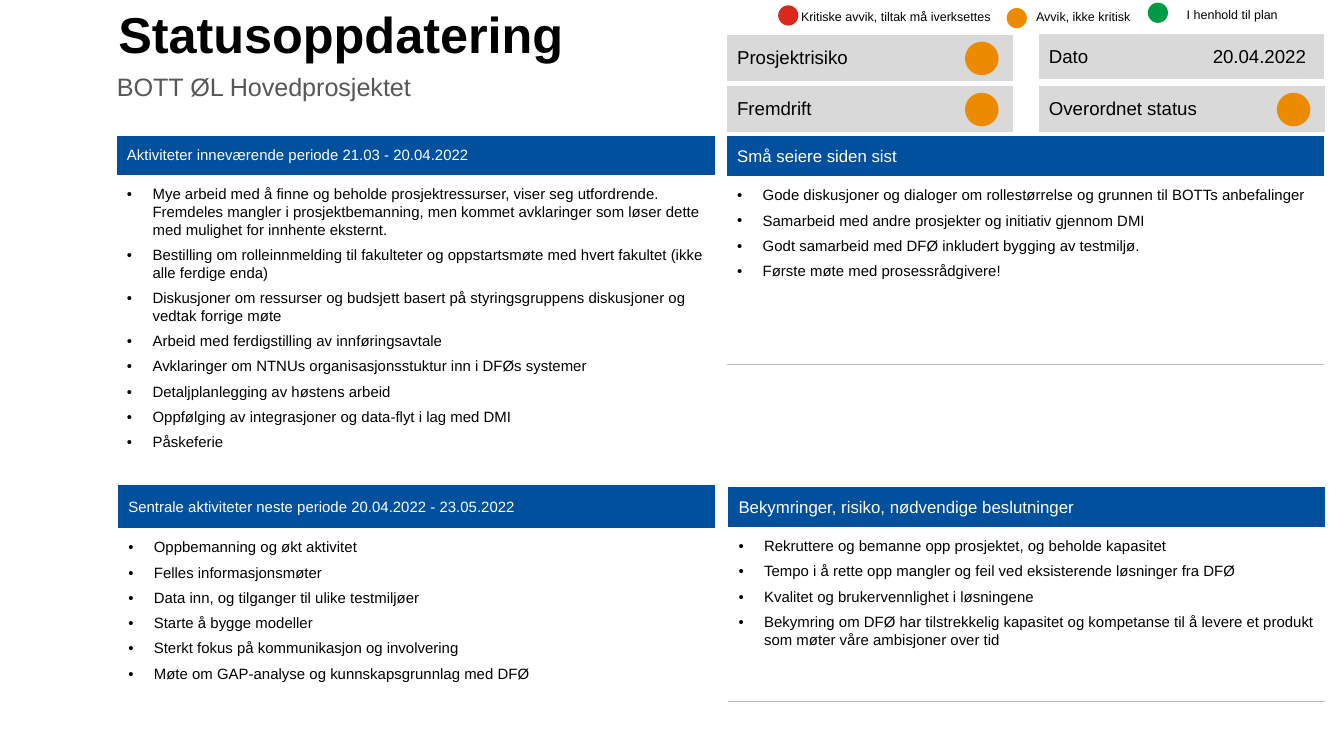
from dataclasses import dataclass

from lxml import etree
from pptx import Presentation
from pptx.dml.color import RGBColor
from pptx.enum.shapes import MSO_SHAPE
from pptx.enum.text import MSO_ANCHOR, MSO_AUTO_SIZE, PP_ALIGN
from pptx.oxml.ns import qn
from pptx.util import Inches, Pt

OVAL, RECTANGLE = MSO_SHAPE.OVAL, MSO_SHAPE.RECTANGLE
TOP, MIDDLE = MSO_ANCHOR.TOP, MSO_ANCHOR.MIDDLE
LEFT, CENTER = PP_ALIGN.LEFT, PP_ALIGN.CENTER
NO_AUTOFIT = MSO_AUTO_SIZE.NONE
NO_STYLE_NO_GRID = "{2D5ABB26-0587-4C30-8999-92F81FD0307C}"


@dataclass(frozen=True)
class Theme:
    font: str = "Arial"
    text: str = "000000"
    white: str = "FFFFFF"
    muted: str = "575757"
    header: str = "01509D"
    status: str = "D9D9D9"
    rule: str = "BBBCBC"
    red: str = "DA291C"
    amber: str = "ED8B00"
    green: str = "009A44"
    title_size: float = 27
    subtitle_size: float = 13.5
    status_size: float = 10
    body_size: float = 8
    legend_size: float = 6.75
    line_spacing: float = 1.06
    space_before: float = 4
    cell_inset: float = 5.4


@dataclass(frozen=True)
class Panel:
    left: float
    top: float
    width: float
    header_height: float
    body_height: float
    heading: str
    heading_size: float
    has_rule: bool
    bullets: tuple[str, ...]


@dataclass(frozen=True)
class StatusBar:
    left: float
    top: float
    columns: tuple[float, ...]
    texts: tuple[str, ...]


@dataclass(frozen=True)
class Legend:
    left: float
    top: float
    width: float
    text: str
    dot_left: float
    dot_top: float
    color: str


THEME = Theme()

PANELS = (
    Panel(0.87, 1.01, 4.45, 0.29, 2.47,
          "Aktiviteter inneværende periode 21.03 - 20.04.2022", 8, False, (
              "Mye arbeid med å finne og beholde prosjektressurser, viser seg utfordrende. "
              "Fremdeles mangler i prosjektbemanning, men kommet avklaringer som løser dette "
              "med mulighet for innhente eksternt.",
              "Bestilling om rolleinnmelding til fakulteter og oppstartsmøte med hvert fakultet "
              "(ikke alle ferdige enda)",
              "Diskusjoner om ressurser og budsjett basert på styringsgruppens diskusjoner og "
              "vedtak forrige møte",
              "Arbeid med ferdigstilling av innføringsavtale",
              "Avklaringer om NTNUs organisasjonsstuktur inn i DFØs systemer",
              "Detaljplanlegging av høstens arbeid",
              "Oppfølging av integrasjoner og data-flyt i lag med DMI",
              "Påskeferie")),
    Panel(5.41, 1.01, 4.44, 0.3, 1.4, "Små seiere siden sist", 9, True, (
        "Gode diskusjoner og dialoger om rollestørrelse og grunnen til BOTTs anbefalinger",
        "Samarbeid med andre prosjekter og initiativ gjennom DMI",
        "Godt samarbeid med DFØ inkludert bygging av testmiljø.",
        "Første møte med prosessrådgivere!")),
    Panel(0.88, 3.61, 4.44, 0.32, 1.69,
          "Sentrale aktiviteter neste periode 20.04.2022 - 23.05.2022", 8, False, (
              "Oppbemanning og økt aktivitet",
              "Felles informasjonsmøter",
              "Data inn, og tilganger til ulike testmiljøer",
              "Starte å bygge modeller",
              "Sterkt fokus på kommunikasjon og involvering",
              "Møte om GAP-analyse og kunnskapsgrunnlag med DFØ")),
    Panel(5.42, 3.62, 4.44, 0.3, 1.3, "Bekymringer, risiko, nødvendige beslutninger", 9, True, (
        "Rekruttere og bemanne opp prosjektet, og beholde kapasitet",
        "Tempo i å rette opp mangler og feil ved eksisterende løsninger fra DFØ",
        "Kvalitet og brukervennlighet i løsningene",
        "Bekymring om DFØ har tilstrekkelig kapasitet og kompetanse til å levere et produkt "
        "som møter våre ambisjoner over tid")),
)

STATUS_BARS = (
    StatusBar(5.41, 0.26, (2.13,), ("Prosjektrisiko",)),
    StatusBar(7.73, 0.25, (1.16, 0.96), ("Dato", "20.04.2022")),
    StatusBar(5.41, 0.64, (2.13,), ("Fremdrift",)),
    StatusBar(7.73, 0.64, (2.13,), ("Overordnet status",)),
)
STATUS_HEIGHT = 0.34

LEGENDS = (
    Legend(5.93, 0.02, 1.49, "Kritiske avvik, tiltak må iverksettes", 5.79, 0.04, THEME.red),
    Legend(7.68, 0.02, 0.77, "Avvik, ikke kritisk", 7.49, 0.06, THEME.amber),
    Legend(8.8, 0, 0.75, "I henhold til plan", 8.54, 0.02, THEME.green),
)
STATUS_DOTS = ((7.18, 0.31), (7.18, 0.69), (9.5, 0.69))


def format_font(font, size: float, color: str, bold: bool = False) -> None:
    font.name = THEME.font
    font.size = Pt(size)
    font.bold = bold
    font.color.rgb = RGBColor.from_string(color)


def format_runs(para, size: float, color: str, bold: bool = False) -> None:
    for span in para.runs:
        format_font(span.font, size, color, bold)


def set_insets(frame, horizontal: int, vertical: int) -> None:
    frame.margin_left = frame.margin_right = horizontal
    frame.margin_top = frame.margin_bottom = vertical


def add_bullet(para) -> None:
    properties = para._p.get_or_add_pPr()
    properties.set("marL", str(Inches(0.19)))
    properties.set("indent", str(-Inches(0.19)))
    bullet_color = etree.SubElement(properties, qn("a:buClr"))
    etree.SubElement(bullet_color, qn("a:srgbClr"), val=THEME.text)
    etree.SubElement(properties, qn("a:buFont"), typeface=THEME.font)
    etree.SubElement(properties, qn("a:buChar"), char="•")


def add_bottom_rule(cell) -> None:
    line = etree.Element(qn("a:lnB"), w=str(Pt(0.5)))
    fill = etree.SubElement(line, qn("a:solidFill"))
    etree.SubElement(fill, qn("a:srgbClr"), val=THEME.rule)
    cell._tc.get_or_add_tcPr().insert(0, line)


def add_plain_table(slide, left: float, top: float, columns: tuple[float, ...],
                    rows: tuple[float, ...]):
    table = slide.shapes.add_table(len(rows), len(columns), Inches(left), Inches(top),
                                   Inches(sum(columns)), Inches(sum(rows))).table
    table.first_row = table.horz_banding = False
    table._tbl.tblPr.find(qn("a:tableStyleId")).text = NO_STYLE_NO_GRID
    for column, width in zip(table.columns, columns):
        column.width = Inches(width)
    for row, height in zip(table.rows, rows):
        row.height = Inches(height)
    return table


def fill_cell(cell, text: str, size: float, color: str, background: str) -> None:
    set_insets(cell, Pt(THEME.cell_inset), Pt(THEME.cell_inset))
    cell.vertical_anchor = MIDDLE
    cell.fill.solid()
    cell.fill.fore_color.rgb = RGBColor.from_string(background)
    cell.text_frame.text = text
    para = cell.text_frame.paragraphs[0]
    para.line_spacing = THEME.line_spacing
    format_runs(para, size, color)


def draw_panel(slide, panel: Panel) -> None:
    table = add_plain_table(slide, panel.left, panel.top, (panel.width,),
                            (panel.header_height, panel.body_height))
    fill_cell(table.cell(0, 0), panel.heading, panel.heading_size, THEME.white, THEME.header)
    body = table.cell(1, 0)
    set_insets(body, Pt(THEME.cell_inset), Pt(THEME.cell_inset))
    body.vertical_anchor = TOP
    body.fill.background()
    body.text_frame.text = "\n".join(panel.bullets)
    for index, para in enumerate(body.text_frame.paragraphs):
        add_bullet(para)
        para.line_spacing = THEME.line_spacing
        if index:
            para.space_before = Pt(THEME.space_before)
        format_font(para.font, THEME.body_size, THEME.text)
        format_runs(para, THEME.body_size, THEME.text)
    if panel.has_rule:
        add_bottom_rule(body)


def draw_status_bar(slide, bar: StatusBar) -> None:
    table = add_plain_table(slide, bar.left, bar.top, bar.columns, (STATUS_HEIGHT,))
    for index, text in enumerate(bar.texts):
        cell = table.cell(0, index)
        fill_cell(cell, text, THEME.status_size, THEME.text, THEME.status)
        cell.text_frame.paragraphs[0].alignment = CENTER if index else LEFT


def draw_shape(slide, kind, left: float, top: float, width: float, height: float, color: str):
    shape = slide.shapes.add_shape(kind, Inches(left), Inches(top), Inches(width), Inches(height))
    shape.shadow.inherit = False
    shape.fill.solid()
    shape.fill.fore_color.rgb = RGBColor.from_string(color)
    shape.line.fill.background()
    return shape


def write_box(box, text: str, size: float, color: str, horizontal: float, vertical: float,
              anchor, bold: bool = False) -> None:
    frame = box.text_frame
    frame.text = text
    frame.word_wrap = True
    frame.auto_size = NO_AUTOFIT
    frame.vertical_anchor = anchor
    set_insets(frame, Inches(horizontal), Inches(vertical))
    frame.paragraphs[0].alignment = LEFT
    format_runs(frame.paragraphs[0], size, color, bold)


def draw_legend(slide, legend: Legend) -> None:
    box = draw_shape(slide, RECTANGLE, legend.left, legend.top, legend.width, 0.21, THEME.white)
    write_box(box, legend.text, THEME.legend_size, THEME.text, 0.03, 0.05, TOP)
    box.text_frame.word_wrap = False
    draw_shape(slide, OVAL, legend.dot_left, legend.dot_top, 0.15, 0.15, legend.color)


def main() -> None:
    deck = Presentation()
    deck.slide_width = Inches(10)
    deck.slide_height = deck.slide_width * 9 // 16
    page = deck.slides.add_slide(deck.slide_layouts[5])

    title = page.shapes.title
    title.left, title.top = Inches(0.81), Inches(0.07)
    title.width, title.height = Inches(3.48), Inches(0.35)
    write_box(title, "Statusoppdatering", THEME.title_size, THEME.text, 0.07, 0.04, MIDDLE, True)
    subtitle = page.shapes.add_textbox(Inches(0.87), Inches(0.53), Inches(3.07), Inches(0.62))
    write_box(subtitle, "BOTT ØL Hovedprosjektet", THEME.subtitle_size, THEME.muted, 0, 0, TOP)

    for panel in PANELS:
        draw_panel(page, panel)
    for bar in STATUS_BARS:
        draw_status_bar(page, bar)
    for legend in LEGENDS:
        draw_legend(page, legend)
    for left, top in STATUS_DOTS:
        draw_shape(page, OVAL, left, top, 0.25, 0.25, THEME.amber)
    deck.save("out.pptx")


if __name__ == "__main__":
    main()
